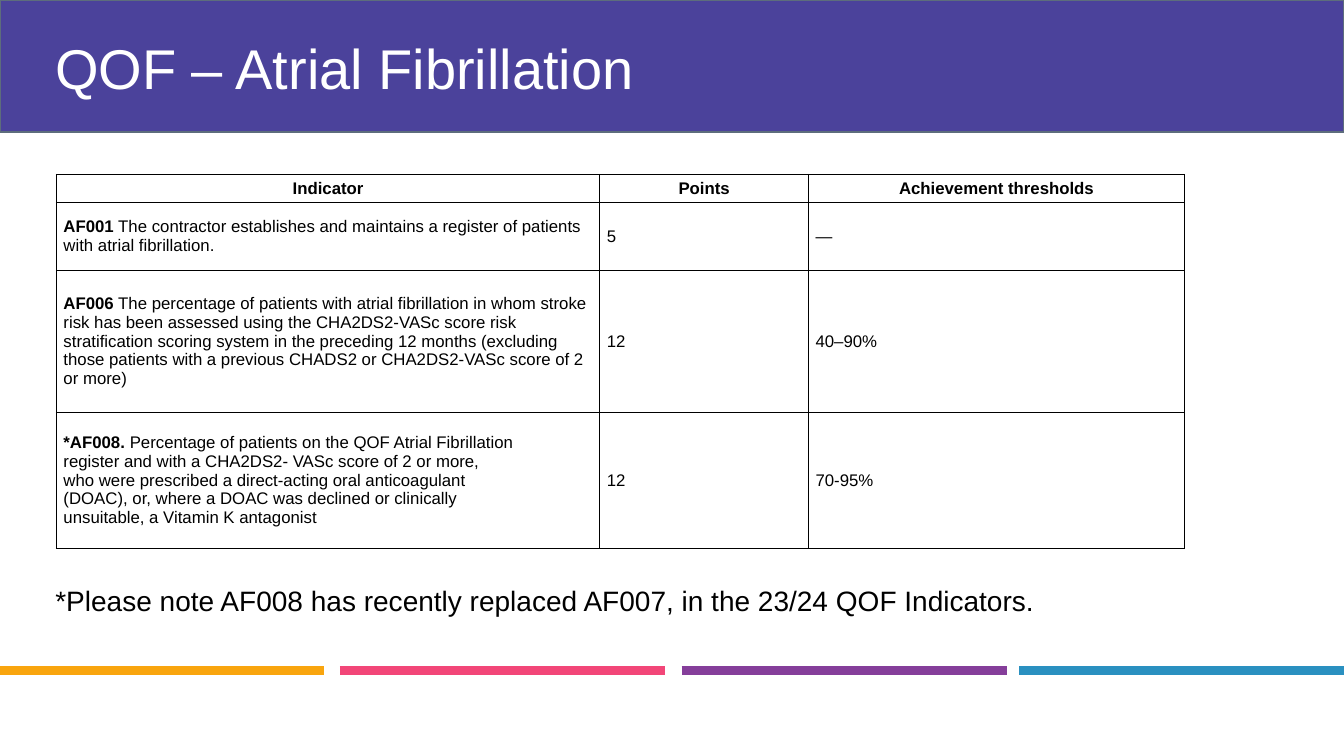
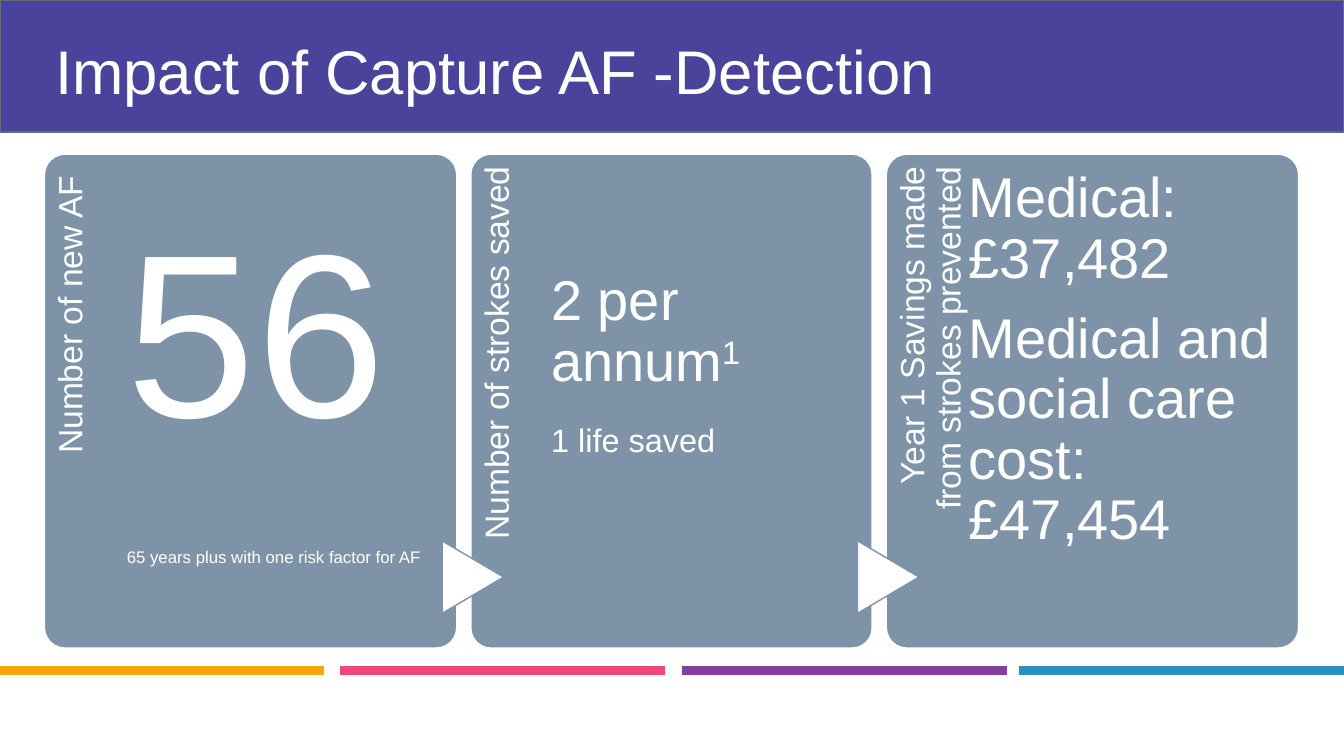
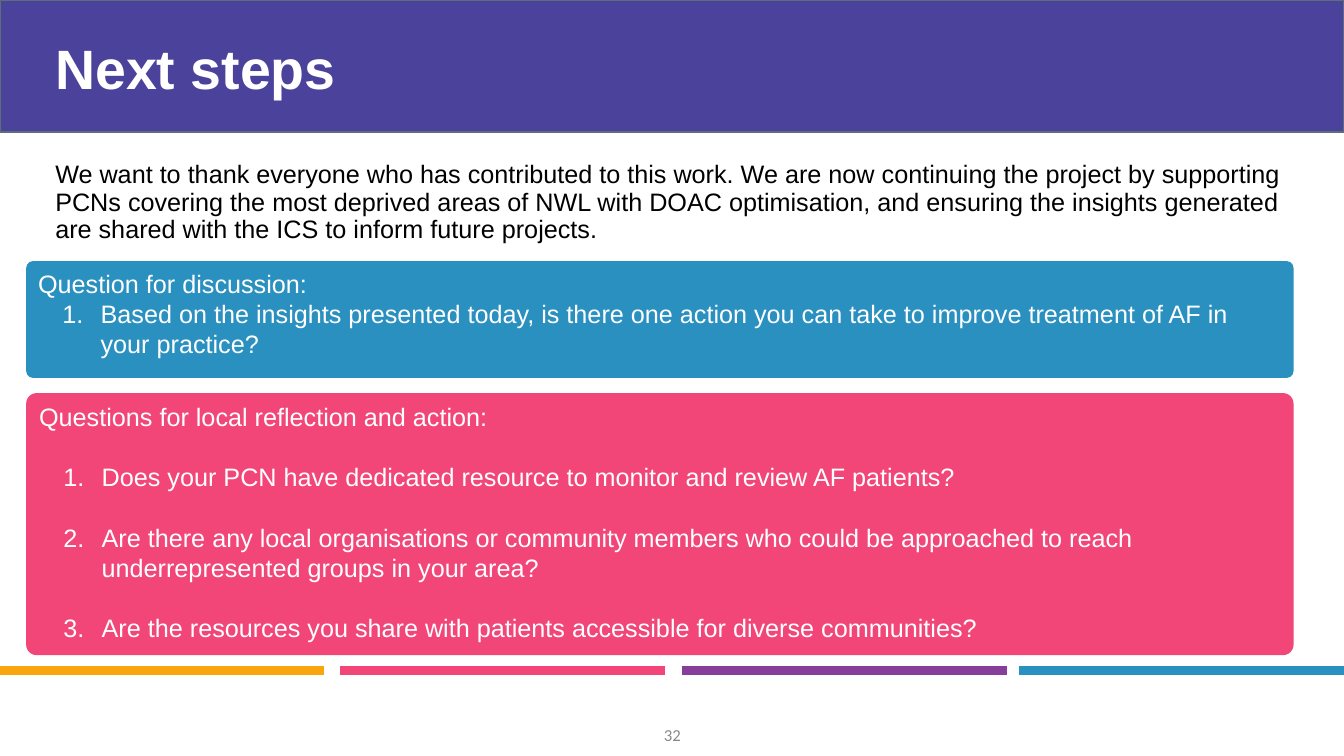
from dataclasses import dataclass

import pptx
import pptx.dml.color
import pptx.enum.shapes
import pptx.enum.text
import pptx.oxml
import pptx.oxml.ns
import pptx.util
from lxml import etree

Inches = pptx.util.Inches
Pt = pptx.util.Pt
RGBColor = pptx.dml.color.RGBColor
SHAPE = pptx.enum.shapes.MSO_SHAPE
ALIGN = pptx.enum.text.PP_ALIGN
ANCHOR = pptx.enum.text.MSO_ANCHOR

INDIGO = RGBColor(0x4B, 0x42, 0x9B)
SLATE = RGBColor(0x5D, 0x6D, 0x7C)
STEEL = RGBColor(0x7E, 0x93, 0xA7)
ORANGE = RGBColor(0xF9, 0xA5, 0x0E)
PINK = RGBColor(0xF2, 0x46, 0x78)
PURPLE = RGBColor(0x85, 0x3E, 0x9A)
BLUE = RGBColor(0x2A, 0x90, 0xC0)
GREY = RGBColor(0x89, 0x89, 0x89)
BLACK = RGBColor(0, 0, 0)
WHITE = RGBColor(0xFF, 0xFF, 0xFF)

SLIDE_WIDTH, SLIDE_HEIGHT = 13.33, 7.5
FOOTER_Y = 6.65


@dataclass(frozen=True)
class Run:
    text: str
    bold: bool = False
    superscript: bool = False


@dataclass(frozen=True)
class Paragraph:
    runs: tuple[Run, ...]
    size: float
    color: RGBColor = WHITE
    font: str = "Arial"
    align: ALIGN = ALIGN.LEFT
    line_spacing: float = 1.0
    before: float = 0
    after: float = 0
    numbered: bool = False


@dataclass(frozen=True)
class Box:
    left: float
    top: float
    width: float
    height: float

    def lengths(self) -> list[int]:
        return [Inches(v) for v in (self.left, self.top, self.width, self.height)]


@dataclass(frozen=True)
class FooterLine:
    start: float
    end: float
    color: RGBColor


@dataclass(frozen=True)
class Panel:
    width: float
    label: str
    details: tuple[Paragraph, ...]
    frame_format: dict


FOOTER_LINES = (
    FooterLine(0, 3.21, ORANGE),
    FooterLine(3.37, 6.6, PINK),
    FooterLine(6.76, 9.99, PURPLE),
    FooterLine(10.11, SLIDE_WIDTH, BLUE),
)


def plain(text: str, size: float, **options) -> Paragraph:
    """A paragraph of one regular run."""
    return Paragraph((Run(text),), size, **options)


def set_values(target, values: dict) -> None:
    for name, value in values.items():
        setattr(target, name, value)


def number_paragraph(paragraph) -> None:
    properties = paragraph._p.get_or_add_pPr()
    properties.set("marL", str(Inches(0.62)))
    properties.set("indent", str(Inches(-0.38)))
    numbering = etree.SubElement(properties, pptx.oxml.ns.qn("a:buAutoNum"))
    numbering.set("type", "arabicPeriod")


def write(frame, paragraphs, **frame_format) -> None:
    set_values(frame, {"word_wrap": True, "vertical_anchor": ANCHOR.TOP, **frame_format})
    for index, content in enumerate(paragraphs):
        paragraph = frame.add_paragraph() if index else frame.paragraphs[0]
        if content.numbered:
            number_paragraph(paragraph)
        set_values(paragraph, {
            "alignment": content.align,
            "line_spacing": content.line_spacing,
            "space_before": Pt(content.before),
            "space_after": Pt(content.after),
        })
        for piece in content.runs:
            run = paragraph.add_run()
            run.text = piece.text
            set_values(run.font, {
                "name": content.font, "size": Pt(content.size), "bold": piece.bold,
            })
            run.font.color.rgb = content.color
            if piece.superscript:
                run._r.get_or_add_rPr().set("baseline", "30000")


def add_text(slide, box: Box, paragraphs, rotation: float = 0, **frame_format) -> None:
    textbox = slide.shapes.add_textbox(*box.lengths())
    textbox.rotation = rotation
    write(textbox.text_frame, paragraphs, **frame_format)


def add_block(slide, preset, box: Box, fill: RGBColor, line: RGBColor | None = None,
              corner: float | None = None):
    block = slide.shapes.add_shape(preset, *box.lengths())
    block.shadow.inherit = False
    block.fill.solid()
    block.fill.fore_color.rgb = fill
    if line is None:
        block.line.fill.background()
    else:
        block.line.color.rgb = line
        block.line.width = Pt(1)
    if corner is not None:
        block.adjustments[0] = corner
    return block


def start_slide(deck, title: str, size: float, bold: bool = False):
    """A blank slide with the title band and the coloured footer lines."""
    slide = deck.slides.add_slide(deck.slide_layouts[6])
    add_block(slide, SHAPE.RECTANGLE, Box(0, 0, SLIDE_WIDTH, 1.31), INDIGO, SLATE)
    for stretch in FOOTER_LINES:
        rule = slide.shapes.add_connector(
            pptx.enum.shapes.MSO_CONNECTOR.STRAIGHT,
            Inches(stretch.start), Inches(FOOTER_Y), Inches(stretch.end), Inches(FOOTER_Y))
        rule.line.color.rgb = stretch.color
        rule.line.width = Pt(6)
        etree.SubElement(rule._element.spPr, pptx.oxml.ns.qn("a:effectLst"))
    heading = Paragraph((Run(title, bold),), size, line_spacing=0.9)
    add_text(slide, Box(0.45, 0.36, 12.44, 0.59), [heading])
    return slide


def add_borders(cell) -> None:
    properties = cell._tc.get_or_add_tcPr()
    for side in ("lnL", "lnR", "lnT", "lnB"):
        properties.append(pptx.oxml.parse_xml(
            f'<a:{side} {pptx.oxml.ns.nsdecls("a")} w="{Pt(1)}"><a:solidFill>'
            f'<a:srgbClr val="{BLACK}"/></a:solidFill></a:{side}>'))


def add_indicator_table(slide) -> None:
    def entry(*runs: Run, align: ALIGN = ALIGN.LEFT) -> Paragraph:
        return Paragraph(runs, 12, BLACK, align=align)

    def indicator(code: str, *lines: str) -> list[Paragraph]:
        first, *others = lines
        return [entry(Run(code, bold=True), Run(first)), *(entry(Run(o)) for o in others)]

    headings = ("Indicator", "Points", "Achievement thresholds")
    rows = [
        [[entry(Run(heading, bold=True), align=ALIGN.CENTER)] for heading in headings],
        [indicator("AF001", " The contractor establishes and maintains a register of "
                   "patients with atrial fibrillation."),
         [entry(Run("5"))], [entry(Run("—"))]],
        [indicator("AF006", " The percentage of patients with atrial fibrillation in whom "
                   "stroke risk has been assessed using the CHA2DS2-VASc score risk "
                   "stratification scoring system in the preceding 12 months (excluding "
                   "those patients with a previous CHADS2 or CHA2DS2-VASc score of 2 or "
                   "more)"),
         [entry(Run("12"))], [entry(Run("40–90%"))]],
        [indicator("*AF008. ", "Percentage of patients on the QOF Atrial Fibrillation",
                   "register and with a CHA2DS2- VASc score of 2 or more,",
                   "who were prescribed a direct-acting oral anticoagulant",
                   "(DOAC), or, where a DOAC was declined or clinically",
                   "unsuitable, a Vitamin K antagonist"),
         [entry(Run("12"))], [entry(Run("70-95%"))]],
    ]
    widths, heights = (5.39, 2.07, 3.73), (0.28, 0.67, 1.41, 1.35)
    box = Box(0.56, 1.73, sum(widths), sum(heights))
    table = slide.shapes.add_table(len(rows), len(widths), *box.lengths()).table
    set_values(table, {"first_row": False, "horz_banding": False})
    for column, width in zip(table.columns, widths):
        column.width = Inches(width)
    for table_row, height, row in zip(table.rows, heights, rows):
        table_row.height = Inches(height)
        for cell, paragraphs in zip(table_row.cells, row):
            add_borders(cell)
            cell.fill.solid()
            cell.fill.fore_color.rgb = WHITE
            set_values(cell, {
                "margin_left": Inches(0.07), "margin_right": Inches(0.07),
                "margin_top": Inches(0.04), "margin_bottom": Inches(0.04),
                "vertical_anchor": ANCHOR.MIDDLE,
            })
            write(cell.text_frame, paragraphs, vertical_anchor=ANCHOR.MIDDLE)


def add_panels(slide, panels) -> None:
    """Rounded panels in a row, each with an upright label and an arrow from the last."""
    left, top, height, gap = 0.44, 1.53, 4.9, 0.14
    label_length = 0.82 * height
    for index, panel in enumerate(panels):
        strip = 0.2 * panel.width
        add_block(slide, SHAPE.ROUNDED_RECTANGLE, Box(left, top, panel.width, height),
                  STEEL, WHITE, corner=0.05)
        label_box = Box(left + (strip - label_length) / 2, top + (label_length - strip) / 2,
                        label_length, strip)
        label = plain(panel.label, 24, align=ALIGN.RIGHT, line_spacing=0.9)
        add_text(slide, label_box, [label], rotation=270, margin_left=0,
                 margin_top=Inches(0.09), margin_right=Inches(0.12), margin_bottom=0)
        if index:
            arrow = add_block(slide, SHAPE.FLOWCHART_EXTRACT,
                              Box(left - 0.34, 5.42, 0.72, 0.61), WHITE, STEEL)
            arrow.rotation = 90
        margins = {"margin_left": 0, "margin_right": 0, "margin_bottom": 0}
        add_text(slide, Box(left + strip, top, 0.745 * panel.width, height),
                 panel.details, **{**margins, **panel.frame_format})
        left += panel.width + gap


def build_indicators(deck) -> None:
    slide = start_slide(deck, "QOF – Atrial Fibrillation", 40)
    add_indicator_table(slide)
    note = plain("*Please note AF008 has recently replaced AF007, in the 23/24 QOF Indicators.",
                 20, color=BLACK, line_spacing=1.5)
    add_text(slide, Box(0.45, 5.57, 12.22, 0.54), [note])


def build_impact(deck) -> None:
    slide = start_slide(deck, "Impact of Capture AF -Detection", 44)
    add_panels(slide, (
        Panel(4.09, "Number of new AF ", (
            plain("56", 166, line_spacing=0.9, after=58),
            plain("65 years plus with one risk factor for AF", 12, line_spacing=0.9),
        ), {"margin_top": Inches(0.62)}),
        Panel(3.98, "Number of strokes saved", (
            Paragraph((Run("2 per annum"), Run("1", superscript=True)), 40,
                      line_spacing=0.9, after=14),
            Paragraph((Run("1 life saved", superscript=True),), 40),
        ), {"margin_top": Inches(0.15), "margin_bottom": Inches(0.64),
            "vertical_anchor": ANCHOR.MIDDLE}),
        Panel(4.09, "Year 1 Savings made from strokes prevented", (
            plain("Medical: £37,482", 40, line_spacing=0.9, after=14),
            plain("Medical and social care cost: £47,454", 40, line_spacing=0.9),
        ), {"margin_top": Inches(0.15)}),
    ))


def add_questions(slide, box: Box, fill: RGBColor, corner: float, heading: str,
                  questions, spacing: float = 0) -> None:
    block = add_block(slide, SHAPE.ROUNDED_RECTANGLE, box, fill, corner=corner)
    items = [plain(question, 18, before=spacing, numbered=True) for question in questions]
    write(block.text_frame, [plain(heading, 18), *items])


def build_next_steps(deck) -> None:
    slide = start_slide(deck, "Next steps", 39.6, bold=True)
    thanks = plain(
        "We want to thank everyone who has contributed to this work. We are now continuing "
        "the project by supporting PCNs covering the most deprived areas of NWL with DOAC "
        "optimisation, and ensuring the insights generated are shared with the ICS to "
        "inform future projects.", 18, color=BLACK, line_spacing=0.9)
    add_text(slide, Box(0.45, 1.56, 12.64, 1.03), [thanks])
    add_questions(slide, Box(0.26, 2.59, 12.57, 1.16), BLUE, 0.06, "Question for discussion:", (
        "Based on the insights presented today, is there one action you can take to improve "
        "treatment of AF in your practice?",
    ))
    add_questions(
        slide, Box(0.26, 3.9, 12.57, 2.6), PINK, 0.04,
        "Questions for local reflection and action:", (
            "Does your PCN have dedicated resource to monitor and review AF patients?",
            "Are there any local organisations or community members who could be approached "
            "to reach underrepresented groups in your area?",
            "Are the resources you share with patients accessible for diverse communities?",
        ), spacing=21.6)
    page_number = plain("32", 12, color=GREY, font="Calibri", align=ALIGN.CENTER)
    add_text(slide, Box(5.17, 7.09, 3, 0.4), [page_number], vertical_anchor=ANCHOR.MIDDLE)


def main() -> None:
    deck = pptx.Presentation()
    deck.slide_width = Inches(SLIDE_WIDTH)
    deck.slide_height = Inches(SLIDE_HEIGHT)
    for build in (build_indicators, build_impact, build_next_steps):
        build(deck)
    deck.save("out.pptx")


if __name__ == "__main__":
    main()
